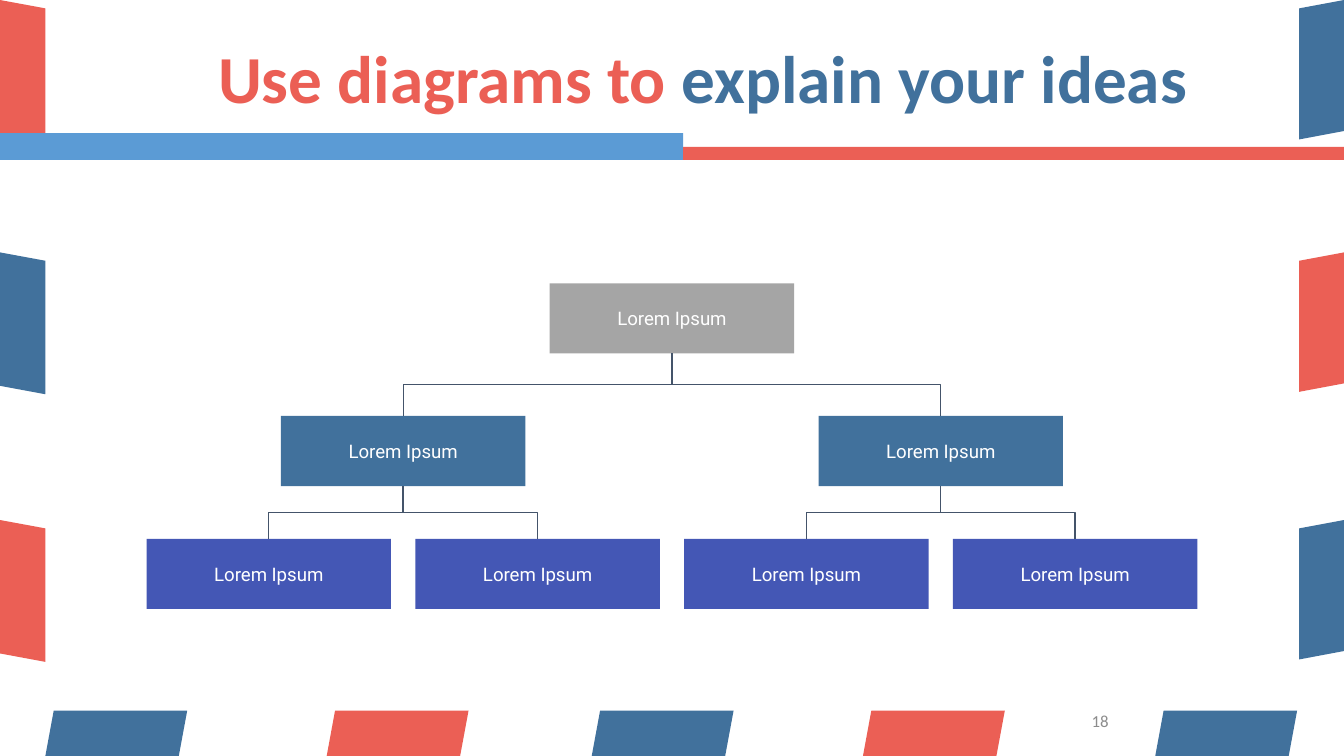
from lxml import etree
from pptx import Presentation
from pptx.dml.color import RGBColor
from pptx.enum.shapes import MSO_CONNECTOR as LINK, MSO_SHAPE as SHAPE
from pptx.enum.text import MSO_ANCHOR as ANCHOR, PP_ALIGN as ALIGN
from pptx.oxml.ns import qn
from pptx.util import Pt

RED, BLUE, SKY = "EB5F55", "41719C", "5B9BD5"
GRAY, INDIGO, SLATE, WHITE = "A5A5A5", "4457B5", "44546A", "FFFFFF"
WIDE, HIGH = 720, 405


def color(code):
    return RGBColor.from_string(code)


class Deck:
    """Holds the fonts and the current slide."""
    head, body = "Calibri", "Roboto"

    def __init__(self):
        self.show = Presentation()
        self.show.slide_width, self.show.slide_height = Pt(WIDE), Pt(HIGH)
        self.slide = self.show.slides.add_slide(self.show.slide_layouts[6])
        self.shapes = self.slide.shapes

    def paint(self, shape, fill):
        shape.shadow.inherit = False
        shape.fill.solid()
        shape.fill.fore_color.rgb = color(fill)
        shape.line.fill.background()

    def label(self, shape, runs, font, size, inset=0, bold=False):
        frame = shape.text_frame
        frame.word_wrap = True
        frame.vertical_anchor = ANCHOR.MIDDLE
        frame.margin_left = frame.margin_right = Pt(inset)
        frame.margin_top = frame.margin_bottom = Pt(inset)
        para = frame.paragraphs[0]
        para.alignment = ALIGN.CENTER
        para.font.name, para.font.size, para.font.bold = font, Pt(size), bold
        for words, tint in runs:
            run = para.add_run()
            run.text = words
            run.font.color.rgb = color(tint)
        return para

    def text(self, x, y, w, h, runs, size, bold=False):
        box = self.shapes.add_textbox(Pt(x), Pt(y), Pt(w), Pt(h))
        return self.label(box, runs, self.head, size, bold=bold)

    def rect(self, x, y, w, h, fill):
        box = self.shapes.add_shape(SHAPE.RECTANGLE, Pt(x), Pt(y), Pt(w), Pt(h))
        self.paint(box, fill)
        return box

    def poly(self, points, fill):
        first, *rest = [(Pt(x), Pt(y)) for x, y in points]
        pen = self.shapes.build_freeform(*first)
        pen.add_line_segments(rest, close=True)
        self.paint(pen.convert_to_shape(), fill)

    def elbow(self, x1, y1, x2, y2):
        # A quarter turn makes the elbow leave downwards
        mid_x, mid_y = (x1 + x2) / 2, (y1 + y2) / 2
        dx, dy = (y2 - y1) / 2, (x1 - x2) / 2
        link = self.shapes.add_connector(
            LINK.ELBOW, Pt(mid_x - dx), Pt(mid_y - dy), Pt(mid_x + dx), Pt(mid_y + dy))
        link.line.color.rgb, link.line.width = color(SLATE), Pt(0.75)
        props = link._element.spPr
        props.find(qn("a:xfrm")).set("rot", "5400000")
        etree.SubElement(props, qn("a:effectLst"))


# Organisation tree: top and fill of each level, then the spread to its children
LEVELS = [(151.8, GRAY, 144), (222.9, BLUE, 72), (288.7, INDIGO, 0)]
BOX_W, BOX_H = 131, 37.6


def tree(deck, mid, depth=0):
    top, fill, gap = LEVELS[depth]
    box = deck.rect(mid - BOX_W / 2, top, BOX_W, BOX_H, fill)
    deck.label(box, [("Lorem Ipsum", WHITE)], deck.body, 10, inset=7.2)
    if gap:
        for kid in (mid - gap, mid + gap):
            tree(deck, kid, depth + 1)
            deck.elbow(mid, top + BOX_H, kid, LEVELS[depth + 1][0])


def main():
    deck = Deck()

    # Slanted stripes along the edges
    edge, slant, long, short = 24.3, 4.5, 71.5, 70.2
    for i, y in enumerate((0, 135.2, 278.6)):
        left, right = (RED, BLUE) if i % 2 == 0 else (BLUE, RED)
        deck.poly([(0, y), (edge, y + slant), (edge, y + slant + long), (0, y + long)], left)
        deck.poly([(WIDE, y), (WIDE - 24, y + slant), (WIDE - 24, y + slant + short),
                   (WIDE, y + short)], right)
    for i, x in enumerate((24.3, 175, 317, 462.3, 618.9)):
        deck.poly([(x, HIGH), (x + slant, HIGH - edge), (x + slant + long, HIGH - edge),
                   (x + long, HIGH)], RED if i % 2 else BLUE)

    # Title and page number
    title = deck.text(66.2, 4.3, 620.6, 78.5,
                      [("Use diagrams to ", RED), ("explain your ideas", BLUE)], 36, True)
    title.line_spacing = 0.9
    deck.text(508.3, 375.4, 162, 21.6, [("18", "8C8C8C")], 9)

    # Diagram
    tree(deck, WIDE / 2)

    # Bars under the title
    deck.rect(0, 71.3, 366, 14.4, SKY)
    deck.rect(366, 78.7, WIDE - 366, 7, RED)

    deck.show.save("out.pptx")


if __name__ == "__main__":
    main()
